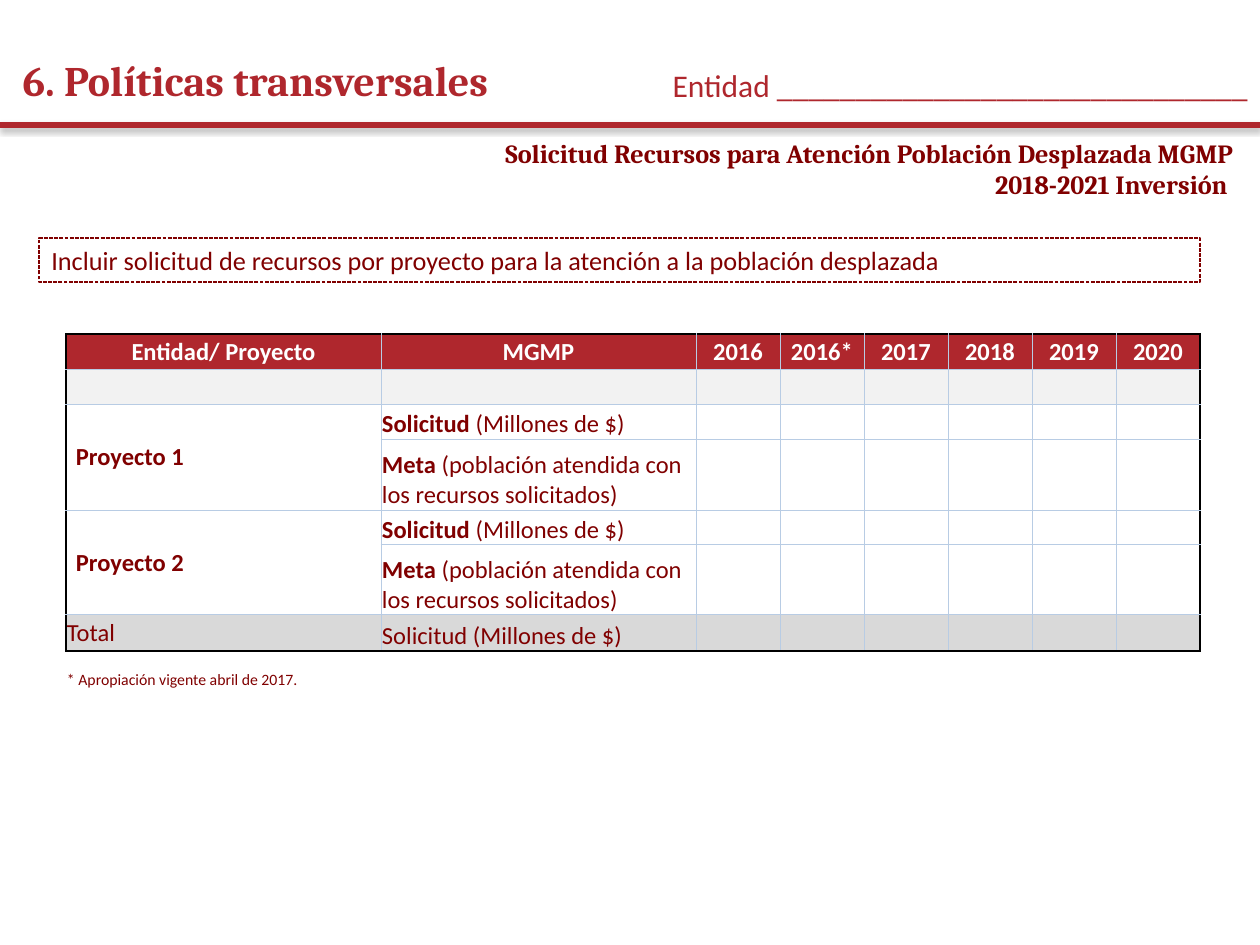
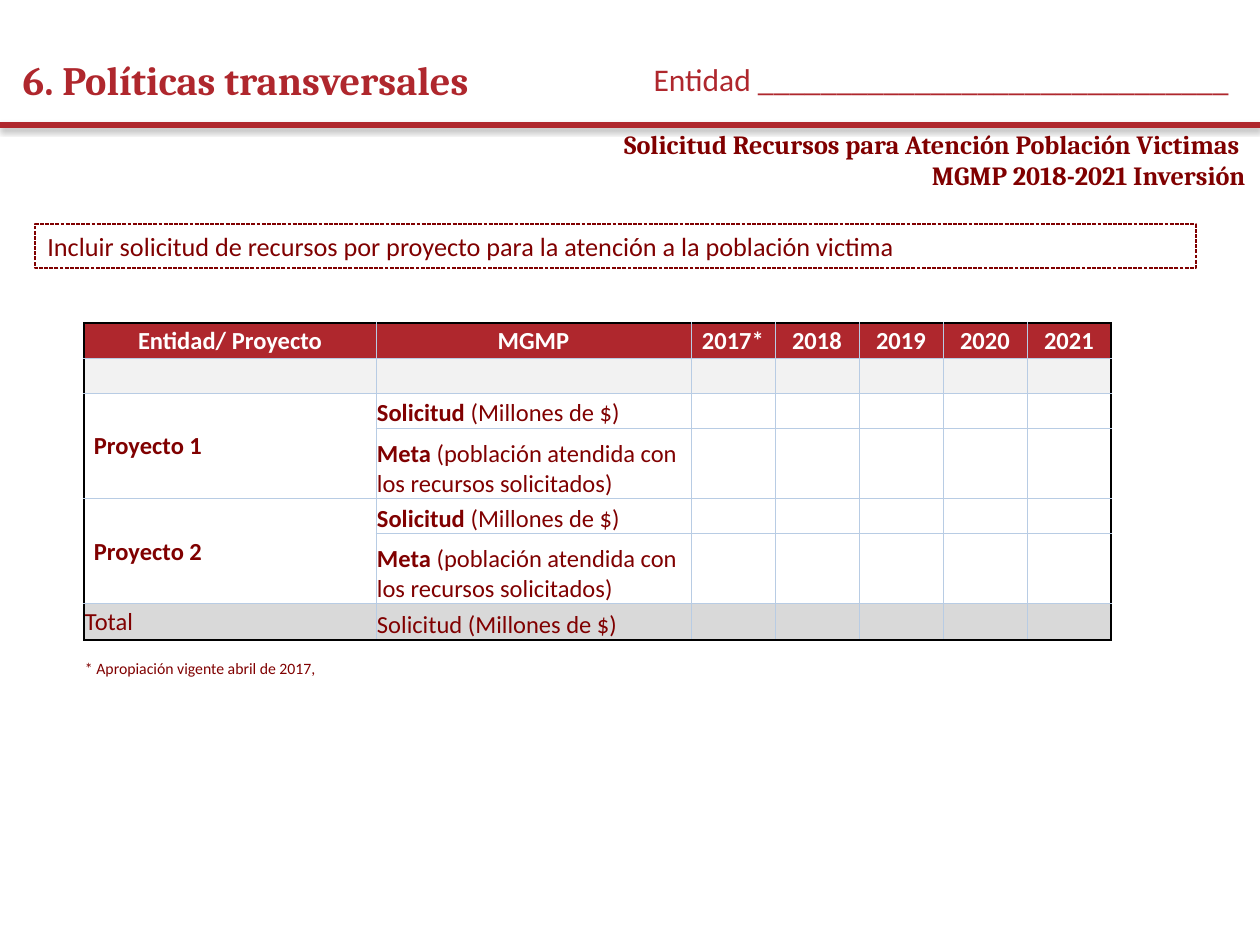
from lxml import etree
from pptx import Presentation
from pptx.dml.color import RGBColor
from pptx.enum.dml import MSO_LINE
from pptx.enum.shapes import MSO_CONNECTOR, MSO_SHAPE
from pptx.enum.text import MSO_ANCHOR, MSO_AUTO_SIZE, PP_ALIGN
from pptx.oxml.ns import qn
from pptx.util import Pt

LEFT, CENTER, RIGHT = PP_ALIGN.LEFT, PP_ALIGN.CENTER, PP_ALIGN.RIGHT
TOP, MIDDLE, BOTTOM = MSO_ANCHOR.TOP, MSO_ANCHOR.MIDDLE, MSO_ANCHOR.BOTTOM
STRAIGHT, RECTANGLE = MSO_CONNECTOR.STRAIGHT, MSO_SHAPE.RECTANGLE
SYS_DASH, NO_AUTOFIT = MSO_LINE.SQUARE_DOT, MSO_AUTO_SIZE.NONE

PX_PER_INCH = 126
WIDTH, HEIGHT = 1260, 945
TITLE_ONLY = 5
COLORS = {
    "brand": "AF272D", "text": "800000", "white": "FFFFFF", "black": "000000",
    "grid": "B8CCE4", "spacer": "F2F2F2", "total": "D9D9D9",
}
BODY, HEADING = "Calibri", "Cambria"

# Table geometry and borders
ROW_HEIGHTS = [35, 35, 35, 71, 35, 70, 36, 39]
MGMP_WIDTH, YEAR_WIDTH = 315, 84
OUTER, INNER = ("black", 1), ("grid", 0.5)


def px(length):
    return round(length * 914400 / PX_PER_INCH)


def rgb(name):
    return RGBColor.from_string(COLORS[name])


class Deck:
    """Shared style plus the slide being built."""

    def __init__(self):
        self.prs = Presentation()
        self.prs.slide_width, self.prs.slide_height = px(WIDTH), px(HEIGHT)
        self.slide = None

    def new_slide(self):
        self.slide = self.prs.slides.add_slide(self.prs.slide_layouts[TITLE_ONLY])
        self.header_rule()

    def fill_text(self, frame, paragraphs, size, color, font=BODY, align=LEFT, anchor=TOP):
        """Each paragraph is a list of (text, bold) runs."""
        frame.word_wrap = True
        frame.vertical_anchor = anchor
        for index, runs in enumerate(paragraphs):
            paragraph = frame.add_paragraph() if index else frame.paragraphs[0]
            paragraph.alignment = align
            for text, bold in runs:
                run = paragraph.add_run()
                run.text = text
                run.font.name, run.font.size, run.font.bold = font, Pt(size), bold
                run.font.color.rgb = rgb(color)

    def header_rule(self):
        rule = self.slide.shapes.add_connector(STRAIGHT, 0, px(125), px(WIDTH), px(125))
        rule.line.color.rgb = rgb("brand")
        rule.line.width = Pt(3)
        effects = etree.SubElement(rule._element.spPr, qn("a:effectLst"))
        shadow = etree.SubElement(effects, qn("a:outerShdw"), blurRad="40000",
                                  dist="23000", dir="5400000", rotWithShape="0")
        tint = etree.SubElement(shadow, qn("a:srgbClr"), val=COLORS["black"])
        etree.SubElement(tint, qn("a:alpha"), val="35000")

    def title(self, text, size):
        title = self.slide.shapes.title
        title.left, title.top, title.width, title.height = map(px, (10, 45, 1046, 69))
        title.text_frame.auto_size = NO_AUTOFIT
        self.fill_text(title.text_frame, [[(text, True)]], size, "brand", HEADING, LEFT, MIDDLE)

    def text(self, box, paragraphs, size, color, **style):
        label = self.slide.shapes.add_textbox(*map(px, box))
        self.fill_text(label.text_frame, paragraphs, size, color, **style)

    def instruction(self, left, top, text):
        frame = self.slide.shapes.add_shape(RECTANGLE, *map(px, (left, top, 1161, 44)))
        frame.shadow.inherit = False
        frame.fill.background()
        frame.line.color.rgb = rgb("text")
        frame.line.width = Pt(0.75)
        frame.line.dash_style = SYS_DASH
        self.fill_text(frame.text_frame, [[(text, False)]], 15, "text")

    def borders(self, cell, sides):
        """Sides come in left, right, top, bottom order; None draws no line."""
        props = cell._tc.get_or_add_tcPr()
        for index, (tag, side) in enumerate(zip(("lnL", "lnR", "lnT", "lnB"), sides)):
            line = etree.Element(qn(f"a:{tag}"))
            if side:
                color, width = side
                line.set("w", str(int(Pt(width))))
                fill = etree.SubElement(line, qn("a:solidFill"))
                etree.SubElement(fill, qn("a:srgbClr"), val=COLORS[color])
            else:
                etree.SubElement(line, qn("a:noFill"))
            props.insert(index, line)

    def cell(self, cell, runs, sides, fill=None, size=14, color="text",
             align=LEFT, anchor=BOTTOM, indent=1):
        cell.margin_left, cell.margin_right = px(indent), px(1)
        cell.margin_top, cell.margin_bottom = px(1), 0
        if fill:
            cell.fill.solid()
            cell.fill.fore_color.rgb = rgb(fill)
        else:
            cell.fill.background()
        self.borders(cell, sides)
        cell.vertical_anchor = anchor
        if runs:
            self.fill_text(cell.text_frame, [runs], size, color, align=align, anchor=anchor)
        else:
            paragraph = cell.text_frame.paragraphs[0]._p
            etree.SubElement(paragraph, qn("a:endParaRPr"), sz=str(size * 100))

    def request_table(self, left, top, project_width, years, footnote):
        widths = [project_width, MGMP_WIDTH] + [YEAR_WIDTH] * len(years)
        last_row, last_col = len(ROW_HEIGHTS) - 1, len(widths) - 1
        table = self.slide.shapes.add_table(
            len(ROW_HEIGHTS), len(widths),
            *map(px, (left, top, sum(widths), sum(ROW_HEIGHTS)))).table
        table.first_row = table.horz_banding = False
        for column, width in zip(table.columns, widths):
            column.width = px(width)
        for row, height in zip(table.rows, ROW_HEIGHTS):
            row.height = px(height)

        # Wording by (row, column)
        request = [("Solicitud", True), (" (Millones de $)", False)]
        goal = [("Meta", True), (" (población atendida con los recursos solicitados)", False)]
        wording = {(0, c): [(name, True)]
                   for c, name in enumerate(["Entidad/ Proyecto", "MGMP", *years])}
        for number, row in enumerate((2, 4), start=1):
            wording[row, 0] = [(f"Proyecto {number}", True)]
            wording[row, 1] = request
            wording[row + 1, 1] = goal
        wording[6, 0] = [("Total", False)]
        wording[6, 1] = [("Solicitud (Millones de $)", False)]
        wording[last_row, 0] = [(footnote, False)]

        # Look by row, with the first column adjusted
        row_styles = {
            0: dict(fill="brand", color="white", align=CENTER, anchor=MIDDLE),
            1: dict(fill="spacer"),
            6: dict(fill="total"),
            last_row: dict(size=9),
        }
        for r in range(last_row + 1):
            for c in range(last_col + 1):
                style = dict(row_styles.get(r, {}))
                if c == 0 and r < last_row:
                    style["anchor"] = MIDDLE
                    if 2 <= r <= 5:
                        style["indent"] = 10
                sides = (None, None, OUTER, None) if r == last_row else (
                    OUTER if c == 0 else INNER,
                    OUTER if c == last_col else INNER,
                    OUTER if r == 0 else INNER,
                    OUTER if r == last_row - 1 else INNER)
                self.cell(table.cell(r, c), wording.get((r, c)), sides, **style)

        # Project names span two rows, the footnote two columns
        for row in (2, 4):
            table.cell(row, 0).merge(table.cell(row + 1, 0))
        table.cell(last_row, 0).merge(table.cell(last_row, 1))


SLIDES = [
    dict(
        title_size=24,
        entity_box=(561, 60, 699, 50),
        subtitle_box=(441, 144, 805, 49),
        subtitle=["Solicitud Recursos para Atención Población Desplazada MGMP 2018-2021 Inversión "],
        instruction=(39, 238, "Incluir solicitud de recursos por proyecto para la "
                              "atención a la población desplazada"),
        table=(66, 334, 315, ["2016", "2016*", "2017", "2018", "2019", "2020"],
               "* Apropiación vigente abril de 2017."),
    ),
    dict(
        title_size=23,
        entity_box=(591, 54, 650, 89),
        subtitle_box=(176, 135, 1082, 49),
        subtitle=["Solicitud Recursos para Atención Población Victimas ",
                  "MGMP 2018-2021 Inversión"],
        instruction=(35, 224, "Incluir solicitud de recursos por proyecto para la "
                              "atención a la población victima"),
        table=(84, 323, 292, ["2017*", "2018", "2019", "2020", "2021"],
               "* Apropiación vigente abril de 2017,"),
    ),
]


def main():
    deck = Deck()
    for content in SLIDES:
        deck.new_slide()
        # Heading band
        deck.title("6. Políticas transversales", content["title_size"])
        deck.text(content["entity_box"], [[("Entidad " + "_" * 30, False)]], 18, "brand",
                  align=RIGHT)
        deck.text(content["subtitle_box"], [[(line, True)] for line in content["subtitle"]],
                  15, "text", font=HEADING, align=RIGHT, anchor=MIDDLE)
        # Request form
        deck.instruction(*content["instruction"])
        deck.request_table(*content["table"])
    deck.prs.save("out.pptx")


if __name__ == "__main__":
    main()
